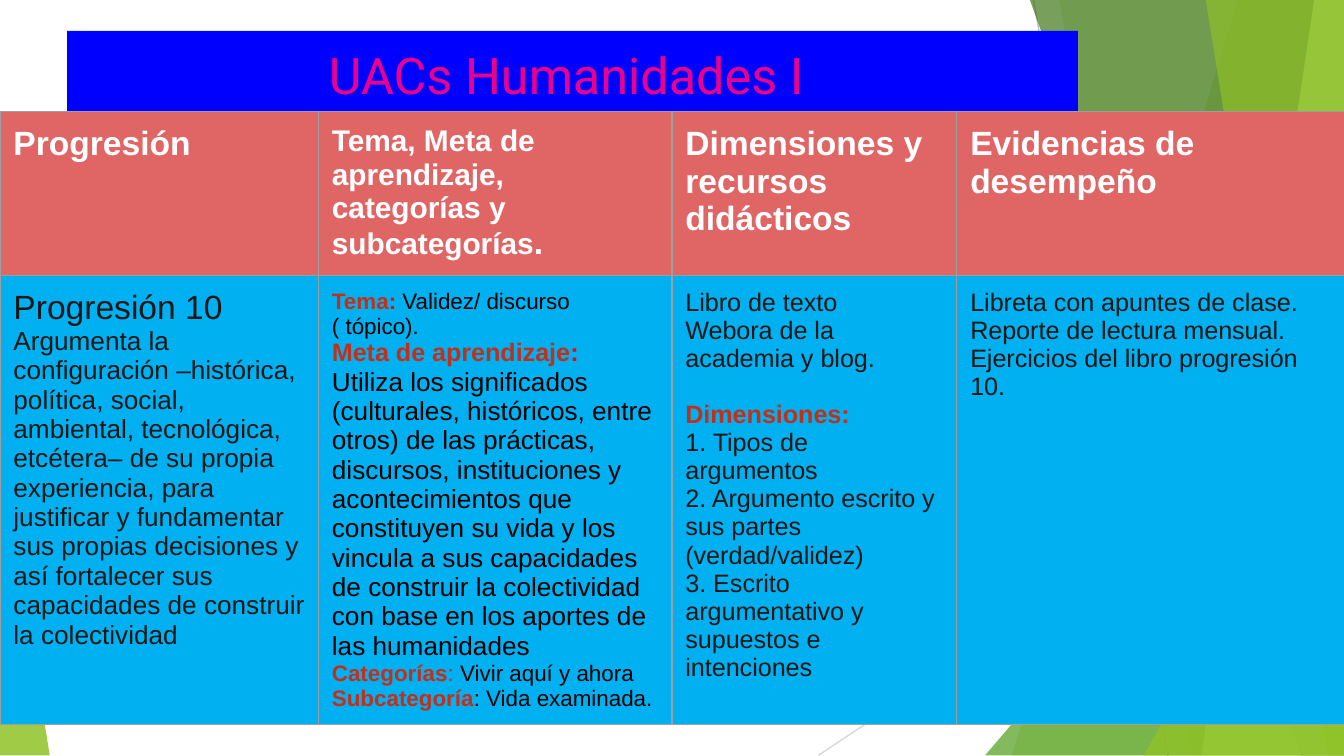
import pptx
import pptx.util
import pptx.dml.color
import pptx.enum.shapes
import pptx.enum.text
import pptx.oxml
import pptx.oxml.ns
import lxml.etree

Inches = pptx.util.Inches
COLORS = {
    "lime": "90C226", "green": "54A021", "forest": "3F7818", "pale": "BFE471",
    "gray": "BFBFBF", "light": "D8D8D8", "border": "9E9E9E", "blue": "0000FF",
    "pink": "EB008B", "coral": "E06666", "sky": "00B0F0", "white": "FFFFFF",
    "black": "000000", "ink": "171717", "brick": "C42F1A", "red": "FF0000",
}


def paint(fill, color, alpha=100):
    fill.solid()
    fill.fore_color.rgb = pptx.dml.color.RGBColor.from_string(COLORS[color])
    if alpha < 100:
        element = fill.fore_color._xFill[0]
        lxml.etree.SubElement(element, pptx.oxml.ns.qn("a:alpha")).set("val", str(alpha * 1000))


def add_text(paragraph, text, size, color, bold=False, font="Arial"):
    run = paragraph.add_run()
    run.text = text
    run.font.name = font
    run.font.size = pptx.util.Pt(size)
    run.font.bold = bold
    run.font.color.rgb = pptx.dml.color.RGBColor.from_string(COLORS[color])


presentation = pptx.Presentation()
presentation.slide_width = Inches(10)
presentation.slide_height = Inches(10) * 9 // 16
slide = presentation.slides.add_slide(presentation.slide_layouts[6])
shapes = slide.shapes

for color, *ends in [("gray", 7.69, 0, 8.69, 5.63), ("light", 10, 3.02, 6.09, 5.62)]:
    line = shapes.add_connector(
        pptx.enum.shapes.MSO_CONNECTOR.STRAIGHT, *[Inches(value) for value in ends])
    line.line.width = pptx.util.Pt(0.75)
    line.line.color.rgb = pptx.dml.color.RGBColor.from_string(COLORS[color])
    lxml.etree.SubElement(line._element.spPr, pptx.oxml.ns.qn("a:effectLst"))

decorations = [
    ("panel", (9.21, 7.53), "lime", 30),
    ("panel", (7.88, 8.87), "lime", 20),
    ("triangle", (7.33, 2.5, 2.67, 3.12, 1), "green", 72),
    ("panel", (7.66, 9.68), "forest", 70),
    ("panel", (9.78, 8.94), "pale", 70),
    ("panel", (8.97, 9.88), "lime", 65),
    ("triangle", (8.51, 2.94, 1.49, 2.68, 1), "lime", 80),
    ("triangle", (0, 3.29, 0.37, 2.33, 0), "lime", 85),
]
for kind, geometry, color, alpha in decorations:
    if kind == "panel":
        top, bottom = geometry
        builder = shapes.build_freeform(Inches(top), Inches(-0.01))
        corners = [(10, -0.01), (10, 5.62), (bottom, 5.62)]
        builder.add_line_segments([(Inches(x), Inches(y)) for x, y in corners])
        shape = builder.convert_to_shape()
    else:
        *box, apex = geometry
        shape = shapes.add_shape(
            pptx.enum.shapes.MSO_SHAPE.ISOSCELES_TRIANGLE, *[Inches(value) for value in box])
        shape.adjustments[0] = apex
    shape.shadow.inherit = False
    shape.line.fill.background()
    paint(shape.fill, color, alpha)

title = shapes.add_shape(
    pptx.enum.shapes.MSO_SHAPE.RECTANGLE, Inches(0.5), Inches(0.23), Inches(7.52), Inches(0.74))
title.shadow.inherit = False
title.line.fill.background()
paint(title.fill, "blue")
title_frame = title.text_frame
title_frame.margin_left = title_frame.margin_right = Inches(0.1)
title_frame.margin_top = title_frame.margin_bottom = Inches(0.1)
title_frame.vertical_anchor = pptx.enum.text.MSO_ANCHOR.TOP
title_paragraph = title_frame.paragraphs[0]
title_paragraph.alignment = pptx.enum.text.PP_ALIGN.CENTER
add_text(title_paragraph, "UACs Humanidades I ", 27, "pink", font="Roboto")

headers = [
    [[("Progresión", 18, "white", True)]],
    [[("Tema, Meta de aprendizaje, categorías y subcategorías", 16, "white", True),
      (".", 18, "white", True)]],
    [[("Dimensiones y recursos didácticos", 18, "white", True)]],
    [[("Evidencias de desempeño", 18, "white", True)]],
]
progression = [
    [("Progresión 10", 18, "ink")],
    [("Argumenta la configuración –histórica, política, social, ambiental, tecnológica, "
      "etcétera– de su propia experiencia, para justificar y fundamentar sus propias "
      "decisiones y así fortalecer sus capacidades de construir la colectividad", 14, "ink")],
]
topic = [
    [("Tema", 12, "brick", True), (": ", 12, "red", True), ("Validez/ discurso", 12, "black")],
    [("( tópico).", 12, "black")],
    [("Meta de aprendizaje", 13.5, "brick", True), (":", 13.5, "red", True)],
    [("Utiliza los significados (culturales, históricos, entre otros) de las prácticas, "
      "discursos, instituciones y acontecimientos que constituyen su vida y los vincula a "
      "sus capacidades de construir la colectividad con base en los aportes de las "
      "humanidades", 14, "black")],
    [("Categorías", 12, "brick", True), (":", 12, "brick"), (" Vivir aquí y ahora", 12, "black")],
    [("Subcategoría", 12, "brick", True), (": Vida examinada.", 12, "black")],
]
resources = [[(text, 13.5, "ink")] for text in [
    "Libro de texto",
    "Webora de la academia y blog.",
    "1. Tipos de argumentos",
    "2. Argumento escrito y sus partes (verdad/validez)",
    "3. Escrito argumentativo y supuestos e intenciones",
]]
resources.insert(2, [("Dimensiones:", 13.5, "brick", True)])
evidence = [[(text, 13.5, "ink")] for text in [
    "Libreta con apuntes de clase.",
    "Reporte de lectura mensual.",
    "Ejercicios del libro progresión 10.",
]]
rows = [("coral", 1.22, headers), ("sky", 3.34, [progression, topic, resources, evidence])]

table = shapes.add_table(2, 4, Inches(0), Inches(0.83), Inches(10.05), Inches(4.56)).table
for column, width in zip(table.columns, [2.37, 2.63, 2.12, 2.93]):
    column.width = Inches(width)

for row_index, (color, height, contents) in enumerate(rows):
    table.rows[row_index].height = Inches(height)
    for column_index, content in enumerate(contents):
        cell = table.cell(row_index, column_index)
        cell.margin_left = cell.margin_right = Inches(0.1)
        cell.margin_top = cell.margin_bottom = Inches(0.1)
        properties = cell._tc.get_or_add_tcPr()
        for side in ["lnL", "lnR", "lnT", "lnB"]:
            properties.append(pptx.oxml.parse_xml(
                f'<a:{side} {pptx.oxml.ns.nsdecls("a")} w="9525"><a:solidFill>'
                f'<a:srgbClr val="{COLORS["border"]}"/></a:solidFill></a:{side}>'))
        paint(cell.fill, color)
        for index, runs in enumerate(content):
            frame = cell.text_frame
            paragraph = frame.add_paragraph() if index else frame.paragraphs[0]
            for run in runs:
                add_text(paragraph, *run)

topic_paragraphs = table.cell(1, 1).text_frame.paragraphs
for paragraph in topic_paragraphs[4:]:
    paragraph.alignment = pptx.enum.text.PP_ALIGN.JUSTIFY
table.cell(1, 2).text_frame.paragraphs[2].space_before = pptx.util.Pt(15)

presentation.save("out.pptx")
